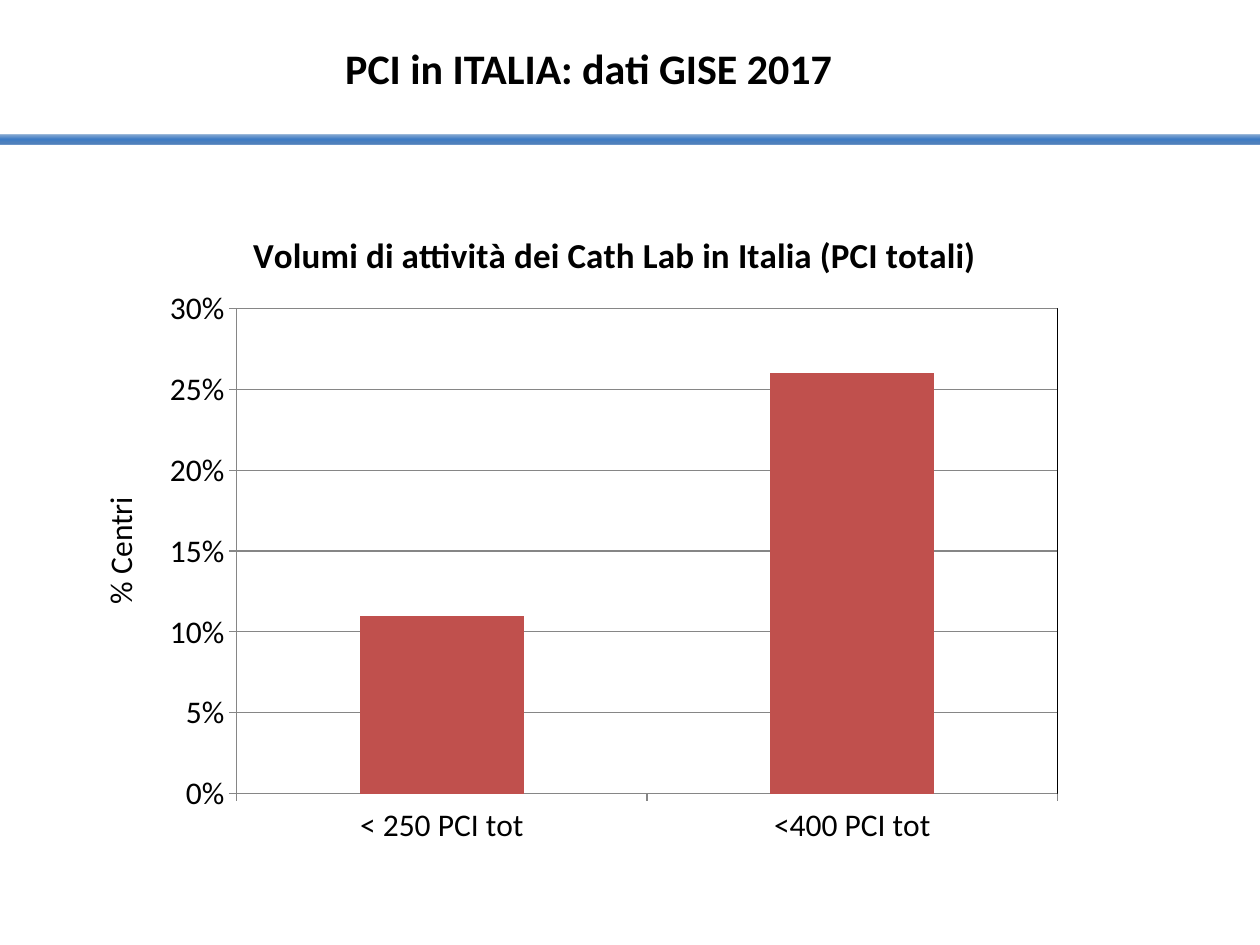
"""Build the slide on PCI volumes in Italian cath labs."""
from lxml import etree
from pptx import Presentation
from pptx import util as u
from pptx.chart.data import CategoryChartData
from pptx.dml.color import RGBColor
from pptx.enum import chart as charts, shapes, text
from pptx.oxml import parse_xml
from pptx.oxml.ns import nsdecls, qn


def color(value):
    return RGBColor.from_string(value)


def style(font, **extra):
    values = {"name": "Calibri", "size": u.Pt(18), "bold": False, **extra}
    for name, value in values.items():
        setattr(font, name, value)
    font.color.rgb = color("000000")


presentation = Presentation()
presentation.slide_width, presentation.slide_height = u.Cm(25.4), u.Cm(19.05)
slide = presentation.slides.add_slide(presentation.slide_layouts[6])

labels = [
    ("PCI in ITALIA: dati GISE 2017", (6.71, 0.74, 14.4, 1.27), 0, True,
     {"size": u.Pt(24), "bold": True}),
    ("% Centri", (1.07, 10.57, 2.69, 1.02), 270, False, {}),
]
for content, box, rotation, wrap, font in labels:
    label = slide.shapes.add_textbox(*map(u.Cm, box))
    label.rotation = rotation
    label.text_frame.word_wrap = wrap
    label.text_frame.auto_size = text.MSO_AUTO_SIZE.SHAPE_TO_FIT_TEXT
    run = label.text_frame.paragraphs[0].add_run()
    run.text = content
    style(run.font, **font)

rule = slide.shapes.add_shape(
    shapes.MSO_SHAPE.RECTANGLE, 0, u.Cm(2.72), presentation.slide_width, u.Cm(0.2))
rule.shadow.inherit = False
rule.line.fill.background()
rule.fill.gradient()
rule.fill.gradient_angle = 90
stops = rule.element.spPr.find(qn("a:gradFill")).find(qn("a:gsLst"))
for stop in list(stops):
    stops.remove(stop)
for position, value, opacity in ((24, "4F81BD", 100), (53, "3D7CC7", 100), (100, "4F81BD", 66)):
    stop = etree.SubElement(stops, qn("a:gs"), pos=str(position * 1000))
    tint = etree.SubElement(stop, qn("a:srgbClr"), val=value)
    etree.SubElement(tint, qn("a:alpha"), val=str(opacity * 1000))

data = CategoryChartData(number_format="0%")
data.categories = ["< 250 PCI tot", "<400 PCI tot"]
data.add_series("Series 1", (0.11, 0.26))
chart = slide.shapes.add_chart(
    charts.XL_CHART_TYPE.COLUMN_CLUSTERED,
    *map(u.Cm, (3.1, 4.11, 18.59, 13.21)), data).chart
style(chart.font)
chart.has_legend = False
chart.has_title = True
title = chart.chart_title.text_frame.paragraphs[0].add_run()
title.text = "Volumi di attività dei Cath Lab in Italia (PCI totali)"
style(title.font, size=u.Pt(20), bold=True)
chart.chart_title.include_in_layout = False

plot = chart.plots[0]
plot.gap_width = 150
plot.vary_by_categories = False
fill = plot.series[0].format.fill
fill.solid()
fill.fore_color.rgb = color("C0504D")

value_axis = chart.value_axis
axis_values = {"minimum_scale": 0, "maximum_scale": 0.3, "major_unit": 0.05,
               "has_major_gridlines": True}
for name, value in axis_values.items():
    setattr(value_axis, name, value)
value_axis.tick_labels.number_format = "0%"
value_axis.tick_labels.number_format_is_linked = False
for axis in (chart.category_axis, value_axis):
    axis.major_tick_mark = charts.XL_TICK_MARK.OUTSIDE
    axis.minor_tick_mark = charts.XL_TICK_MARK.NONE
for part in (chart.category_axis, value_axis, value_axis.major_gridlines):
    part.format.line.color.rgb = color("868686")
    part.format.line.width = u.Pt(0.75)

plot_area = chart.element.chart.plotArea
for layout in plot_area.findall(qn("c:layout")):
    plot_area.remove(layout)
layout = etree.Element(qn("c:layout"))
manual = etree.SubElement(layout, qn("c:manualLayout"))
frame = {"layoutTarget": "inner", "xMode": "edge", "yMode": "edge",
         "x": 0.09, "y": 0.16, "w": 0.89, "h": 0.74}
for name, value in frame.items():
    etree.SubElement(manual, qn(f"c:{name}"), val=str(value))
plot_area.insert(0, layout)
plot_area.append(parse_xml(
    f'<c:spPr {nsdecls("c", "a")}><a:noFill/><a:ln w="9525"><a:solidFill>'
    '<a:srgbClr val="000000"/></a:solidFill></a:ln></c:spPr>'))

presentation.save("out.pptx")
